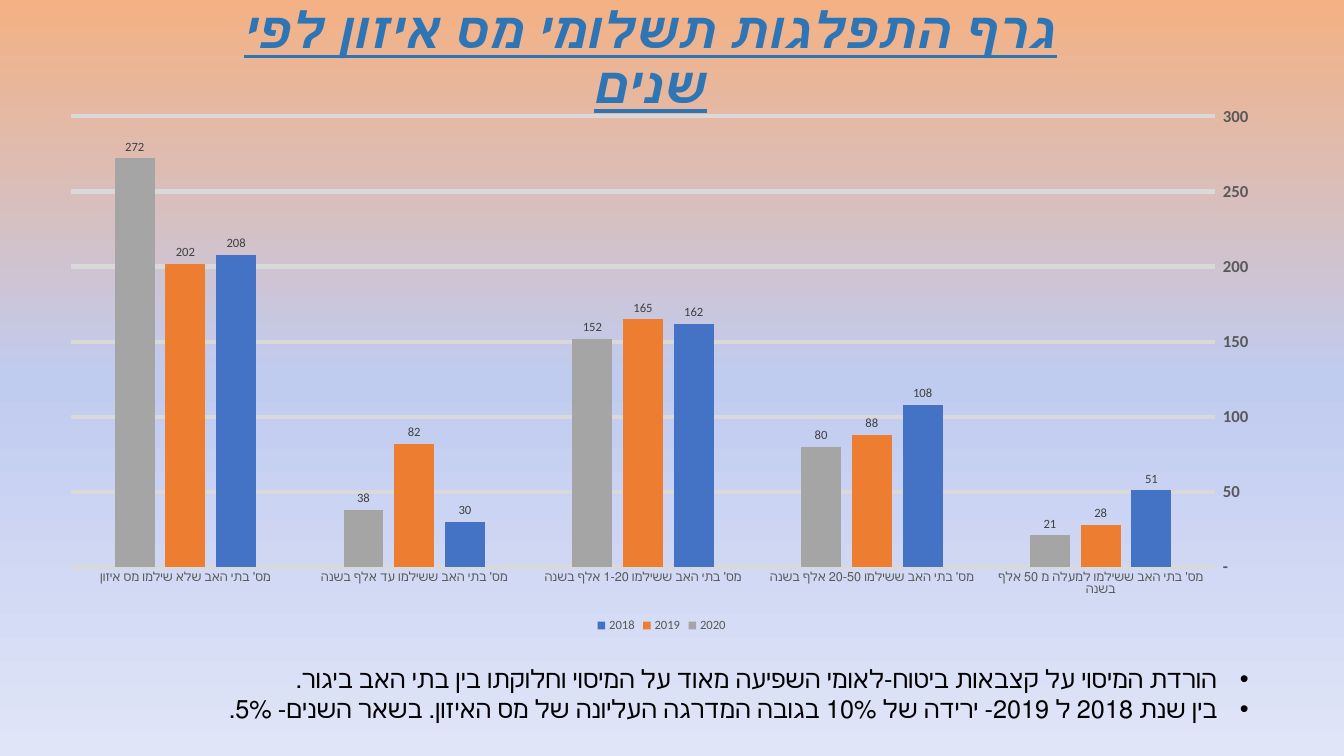
from dataclasses import dataclass

from lxml.etree import SubElement
from copy import deepcopy
from pptx import Presentation
from pptx.chart.data import CategoryChartData
from pptx.dml.color import RGBColor
from pptx.enum.chart import (XL_CHART_TYPE, XL_LABEL_POSITION,
                             XL_LEGEND_POSITION, XL_TICK_MARK)
from pptx.enum.text import MSO_ANCHOR, MSO_AUTO_SIZE, PP_ALIGN
from pptx.oxml.ns import qn
from pptx.util import Cm, Pt


@dataclass(frozen=True)
class Theme:
    font: str = "Calibri"
    background: tuple = ((0, "F4B183"), (0.5, "C0CBF0"), (1, "E0E5F7"))
    series: tuple = ("4472C4", "ED7D31", "A5A5A5")
    title: str = "2E75B6"
    body: str = "000000"
    axis: str = "595959"
    label: str = "404040"
    grid: str = "D9D9D9"
    title_size: int = 36
    body_size: int = 18
    scale_size: int = 12
    small_size: int = 9


TITLE = "גרף התפלגות תשלומי מס איזון לפי שנים"
BRACKETS = (
    "מס' בתי האב ששילמו למעלה מ 50 אלף בשנה",
    "מס' בתי האב ששילמו 20-50 אלף בשנה",
    "מס' בתי האב ששילמו 1-20 אלף בשנה",
    "מס' בתי האב ששילמו עד אלף בשנה",
    "מס' בתי האב שלא שילמו מס איזון",
)
HOUSEHOLDS = {
    "2018": (51, 108, 162, 30, 208),
    "2019": (28, 88, 165, 82, 202),
    "2020": (21, 80, 152, 38, 272),
}
FINDINGS = (
    "הורדת המיסוי על קצבאות ביטוח-לאומי השפיעה מאוד על המיסוי וחלוקתו בין בתי האב ביגור.",
    "בין שנת 2018 ל 2019- ירידה של 10% בגובה המדרגה העליונה של מס האיזון. בשאר השנים- 5%.",
)
COUNT_FORMAT = r'_ * #,##0_ ;_ * \-#,##0_ ;_ * "-"??_ ;_ '


class SlideBuilder:
    def __init__(self, slide, theme):
        self.slide = slide
        self.theme = theme

    def style_font(self, font, size, color, bold=False):
        font.name = self.theme.font
        font.size = Pt(size)
        font.bold = bold
        font.color.rgb = RGBColor.from_string(color)

    def background(self):
        fill = self.slide.background.fill
        fill.gradient()
        fill.gradient_angle = 270
        stop_list = next(self.slide.element.iter(qn("a:gsLst")))
        stop_list.append(deepcopy(stop_list[-1]))
        for stop, (position, color) in zip(fill.gradient_stops, self.theme.background):
            stop.position = position
            stop.color.rgb = RGBColor.from_string(color)

    def place(self, placeholder, left, top, width, height):
        """Move a placeholder and return its text frame, anchored at the top."""
        placeholder.left, placeholder.top = Cm(left), Cm(top)
        placeholder.width, placeholder.height = Cm(width), Cm(height)
        frame = placeholder.text_frame
        frame.word_wrap = True
        frame.auto_size = MSO_AUTO_SIZE.SHAPE_TO_FIT_TEXT
        frame.vertical_anchor = MSO_ANCHOR.TOP
        return frame

    def write_rtl(self, paragraph, text, alignment, size, color, bold=False):
        paragraph.alignment = alignment
        paragraph.space_before = Pt(0)
        paragraph._p.get_or_add_pPr().set("rtl", "1")
        run = paragraph.add_run()
        run.text = text
        self.style_font(run.font, size, color, bold)
        return run

    def title(self, text, *box):
        paragraph = self.place(self.slide.shapes.title, *box).paragraphs[0]
        paragraph.line_spacing = 0.9
        paragraph.space_after = Pt(6)
        run = self.write_rtl(paragraph, text, PP_ALIGN.CENTER,
                             self.theme.title_size, self.theme.title, bold=True)
        run.font.italic = True
        run.font.underline = True

    def bullets(self, items, *box):
        frame = self.place(self.slide.placeholders[1], *box)
        for index, item in enumerate(items):
            paragraph = frame.add_paragraph() if index else frame.paragraphs[0]
            self.write_rtl(paragraph, item, PP_ALIGN.RIGHT,
                           self.theme.body_size, self.theme.body)
            properties = paragraph._p.get_or_add_pPr()
            properties.set("marL", str(Cm(0.79)))
            properties.set("marR", "0")
            properties.set("indent", str(Cm(-0.79)))
            SubElement(properties, qn("a:buFont")).set("typeface", "Arial")
            SubElement(properties, qn("a:buChar")).set("char", "•")

    def column_chart(self, categories, series, left, top, width, height):
        data = CategoryChartData(number_format=COUNT_FORMAT)
        data.categories = categories
        for name, values in series.items():
            data.add_series(name, values)
        chart = self.slide.shapes.add_chart(
            XL_CHART_TYPE.COLUMN_CLUSTERED,
            Cm(left), Cm(top), Cm(width), Cm(height), data).chart
        chart.has_title = False
        theme = self.theme
        self.style_font(chart.font, theme.small_size, theme.axis)
        self.style_axes(chart)
        self.style_columns(chart.plots[0])
        chart.has_legend = True
        chart.legend.position = XL_LEGEND_POSITION.BOTTOM
        chart.legend.include_in_layout = False
        self.style_font(chart.legend.font, theme.small_size, theme.axis)

    def style_axes(self, chart):
        theme = self.theme
        brackets, counts = chart.category_axis, chart.value_axis
        for axis in (brackets, counts):
            axis.major_tick_mark = axis.minor_tick_mark = XL_TICK_MARK.NONE
        brackets.reverse_order = True
        self.style_font(brackets.tick_labels.font, theme.small_size, theme.axis)
        self.style_font(counts.tick_labels.font, theme.scale_size, theme.axis, bold=True)
        counts.tick_labels.number_format = COUNT_FORMAT
        counts.tick_labels.number_format_is_linked = False
        counts.format.line.fill.background()
        counts.has_major_gridlines = True
        for line, weight in ((brackets.format.line, 0.75),
                             (counts.major_gridlines.format.line, 3)):
            line.width = Pt(weight)
            line.color.rgb = RGBColor.from_string(theme.grid)

    def style_columns(self, plot):
        theme = self.theme
        plot.gap_width = 219
        plot.overlap = -27
        plot.vary_by_categories = False
        for year, color in zip(plot.series, theme.series):
            year.format.fill.solid()
            year.format.fill.fore_color.rgb = RGBColor.from_string(color)
            labels = year.data_labels
            labels.show_value = True
            labels.position = XL_LABEL_POSITION.OUTSIDE_END
            labels.number_format = COUNT_FORMAT
            labels.number_format_is_linked = False
            self.style_font(labels.font, theme.small_size, theme.label)


def main():
    deck = Presentation()
    deck.slide_width, deck.slide_height = Cm(33.87), Cm(19.05)
    builder = SlideBuilder(deck.slides.add_slide(deck.slide_layouts[1]), Theme())
    builder.background()
    builder.title(TITLE, 5.13, 0, 22.53, 1.65)
    builder.column_chart(BRACKETS, HOUSEHOLDS, 1.17, 2.41, 31.01, 13.64)
    builder.bullets(FINDINGS, 2, 16.59, 29.72, 1.8)
    deck.save("out.pptx")


if __name__ == "__main__":
    main()
